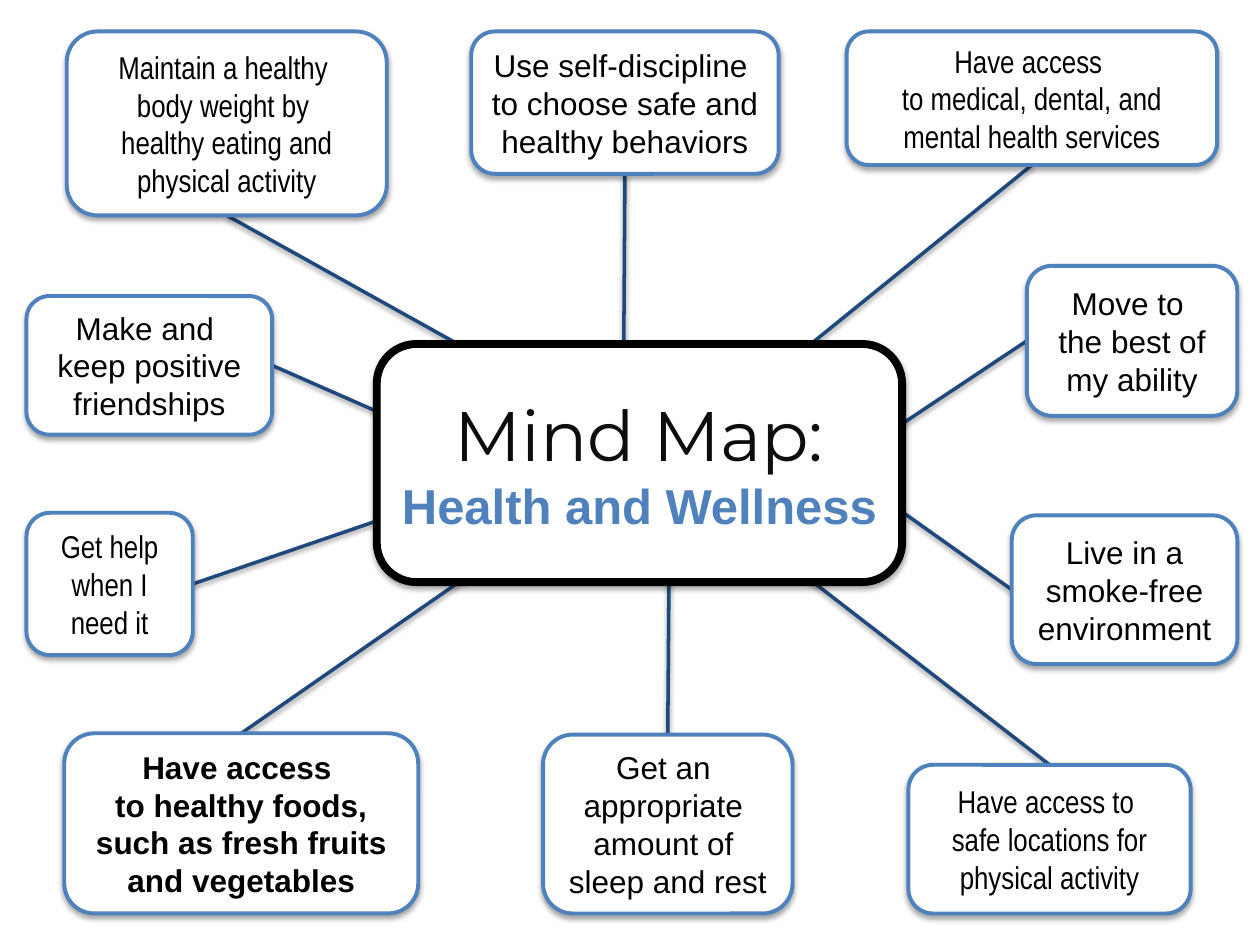
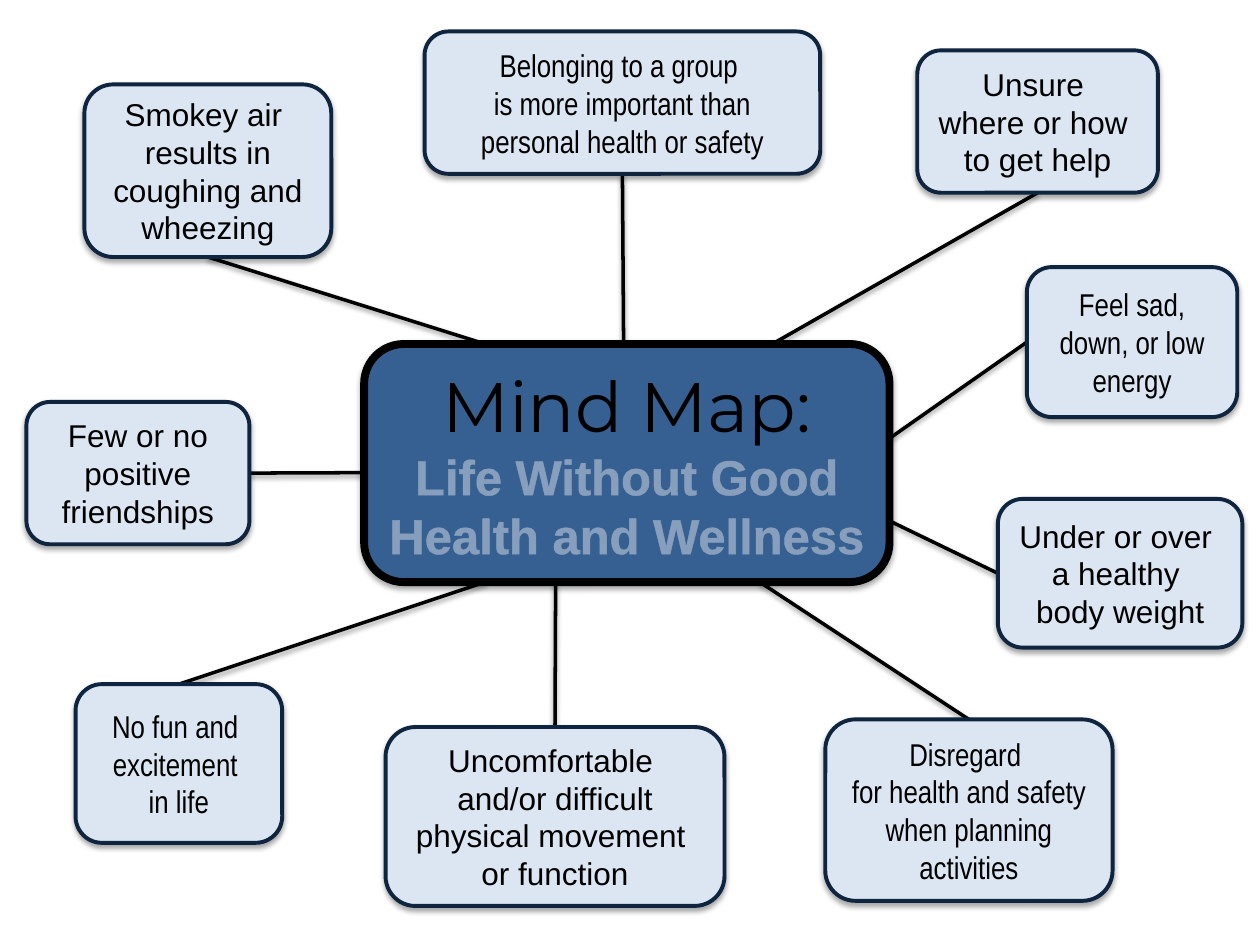
from lxml import etree
from pptx import Presentation
from pptx.dml.color import RGBColor
from pptx.enum.shapes import MSO_CONNECTOR as LINE, MSO_SHAPE as SHAPE
from pptx.enum.text import MSO_ANCHOR as ANCHOR, PP_ALIGN as ALIGN
from pptx.oxml import parse_xml
from pptx.oxml.ns import nsdecls, qn
from pptx.util import Inches, Pt

TOP, LEFT, BOTTOM, RIGHT = range(4)
ARIAL, NARROW = "Arial", "Arial Narrow"
BLACK, WHITE = "000000", "FFFFFF"
HUB_SIZE = 4.17, 1.89


def color(code):
    """Turn a hex string into a colour."""
    return RGBColor.from_string(code)


def shade(shape, alpha, dist):
    """Give a shape a soft shadow straight below it."""
    shape._element.spPr.append(parse_xml(
        f'<a:effectLst {nsdecls("a")}><a:outerShdw blurRad="{Pt(3.1)}" '
        f'dist="{Pt(dist)}" dir="5400000" rotWithShape="0">'
        f'<a:srgbClr val="{BLACK}"><a:alpha val="{alpha}000"/></a:srgbClr>'
        '</a:outerShdw></a:effectLst>'))


def rim(run, width, alpha):
    """Outline the letters of a run in white."""
    line = etree.fromstring(
        f'<a:ln {nsdecls("a")} w="{Pt(width)}"><a:solidFill>'
        f'<a:srgbClr val="{WHITE}"><a:alpha val="{alpha}000"/></a:srgbClr>'
        '</a:solidFill></a:ln>')
    run.font._element.insert(0, line)


def write(frame, text, size=18, font=ARIAL, ink=BLACK, bold=False, edge=None):
    """Add centred paragraphs, one for each line of text."""
    for part in text.split("\n"):
        last = frame.paragraphs[-1]
        para = frame.add_paragraph() if last.runs else last
        para.text = part
        para.alignment = ALIGN.CENTER
        for run in para.runs:
            run.font.size = Pt(size)
            run.font.name = font
            run.font.bold = bold
            run.font.color.rgb = color(ink)
            if edge:
                rim(run, *edge)


class Map:
    """Draw one mind map in one style."""

    def __init__(self, deck, fill, border, link):
        """Open a blank slide and keep the style."""
        self.slide = deck.slides.add_slide(deck.slide_layouts[6])
        self.fill, self.border, self.link = fill, border, link

    def box(self, place, fill, border, width):
        """Add a rounded box."""
        box = self.slide.shapes.add_shape(
            SHAPE.ROUNDED_RECTANGLE, *map(Inches, place))
        box.fill.solid()
        box.fill.fore_color.rgb = color(fill)
        box.line.color.rgb = color(border)
        box.line.width = Pt(width)
        shade(box, 35, 1.8)
        box.text_frame.word_wrap = True
        box.text_frame.vertical_anchor = ANCHOR.MIDDLE
        return box

    def line(self, end):
        """Add a link that ends at a point by the hub."""
        x, y = map(Inches, end)
        line = self.slide.shapes.add_connector(LINE.STRAIGHT, x, y, x, y)
        line.line.color.rgb = color(self.link)
        line.line.width = Pt(2)
        shade(line, 38, 1.6)
        return line

    def idea(self, place, side, end, text, font=ARIAL, bold=False):
        """Add an idea box with its link to the hub."""
        line = self.line(end)
        box = self.box(place, self.fill, self.border, 2.25)
        write(box.text_frame, text, font=font, bold=bold)
        line.begin_connect(box, side)

    def hub(self, left, fill, topic, title, theme):
        """Add the central box with title and topic."""
        frame = self.box((left, 2.73, *HUB_SIZE), fill, BLACK, 4.5).text_frame
        write(frame, "Mind Map:", size=40, font="Montserrat", **title)
        write(frame, topic, size=28, bold=True, **theme)


GOOD = [
    ((0.21, 2.35, 1.95, 1.1), RIGHT, (3.07, 3.3),
     "Make and \nkeep positive friendships"),
    ((0.53, 0.25, 2.54, 1.46), BOTTOM, (3.83, 2.84),
     "Maintain a healthy \nbody weight by \n"
     "healthy eating and physical activity", NARROW),
    ((8.15, 2.11, 1.67, 1.19), LEFT, (7.03, 3.45),
     "Move to \vthe best of my ability"),
    ((7.21, 6.07, 2.24, 1.18), TOP, (6.35, 4.54),
     "Have access to \nsafe locations for physical activity", NARROW),
    ((6.72, 0.25, 2.94, 1.06), BOTTOM, (6.3, 2.84),
     "Have access \vto medical, dental, and mental health services", NARROW),
    ((8.03, 4.09, 1.79, 1.18), LEFT, (7.03, 3.97),
     "Live in a smoke-free environment"),
    ((4.31, 5.83, 1.98, 1.42), TOP, (5.31, 4.54),
     "Get an \vappropriate \vamount of \vsleep and rest"),
    ((0.51, 5.82, 2.81, 1.43), TOP, (3.83, 4.49),
     "Have access \vto healthy foods, such as fresh fruits and vegetables",
     ARIAL, True),
    ((3.74, 0.25, 2.44, 1.13), BOTTOM, (4.95, 2.84),
     "Use self-discipline \vto choose safe and healthy behaviors"),
    ((0.21, 4.07, 1.32, 1.13), RIGHT, (3.18, 4.07),
     "Get help when I need it", NARROW),
]

POOR = [
    ((0.67, 0.67, 1.96, 1.37), BOTTOM, (3.85, 2.73),
     "Smokey air \vresults in coughing and wheezing"),
    ((8.15, 2.12, 1.67, 1.19), LEFT, (7.03, 3.5),
     "Feel sad, down, or low energy", NARROW),
    ((6.55, 5.71, 2.28, 1.44), TOP, (6.03, 4.62),
     "Disregard \vfor health and safety when planning activities", NARROW),
    ((7.28, 0.4, 1.91, 1.13), BOTTOM, (6.13, 2.73),
     "Unsure \vwhere or how \vto get help"),
    ((7.92, 3.96, 1.94, 1.18), LEFT, (7.03, 4.12),
     "Under or over \na healthy \nbody weight"),
    ((3.06, 5.77, 2.69, 1.42), TOP, (4.41, 4.62),
     "Uncomfortable \nand/or difficult physical movement \nor function"),
    ((0.6, 5.43, 1.64, 1.26), TOP, (3.85, 4.62),
     "No fun and \nexcitement \nin life", NARROW),
    ((3.37, 0.25, 3.14, 1.13), BOTTOM, (4.95, 2.84),
     "Belonging to a group \n"
     "is more important than personal health or safety", NARROW),
    ((0.21, 3.19, 1.77, 1.13), RIGHT, (3.18, 3.75),
     "Few or no positive friendships"),
]


def main():
    """Build both mind maps."""
    deck = Presentation()
    deck.slide_width, deck.slide_height = Inches(10), Inches(7.5)

    good = Map(deck, WHITE, "4F81BD", "1F497D")
    for idea in GOOD:
        good.idea(*idea)
    good.hub(2.99, WHITE, "Health and Wellness",
             dict(ink="0D0D0D"), dict(ink="4F81BD"))

    poor = Map(deck, "DCE6F2", "0F243E", BLACK)
    for idea in POOR:
        poor.idea(*idea)
    poor.hub(2.89, "376092", "Life Without Good Health and Wellness",
             dict(edge=(1, 100)), dict(ink=WHITE, edge=(0.75, 40)))

    deck.save("out.pptx")


if __name__ == "__main__":
    main()
